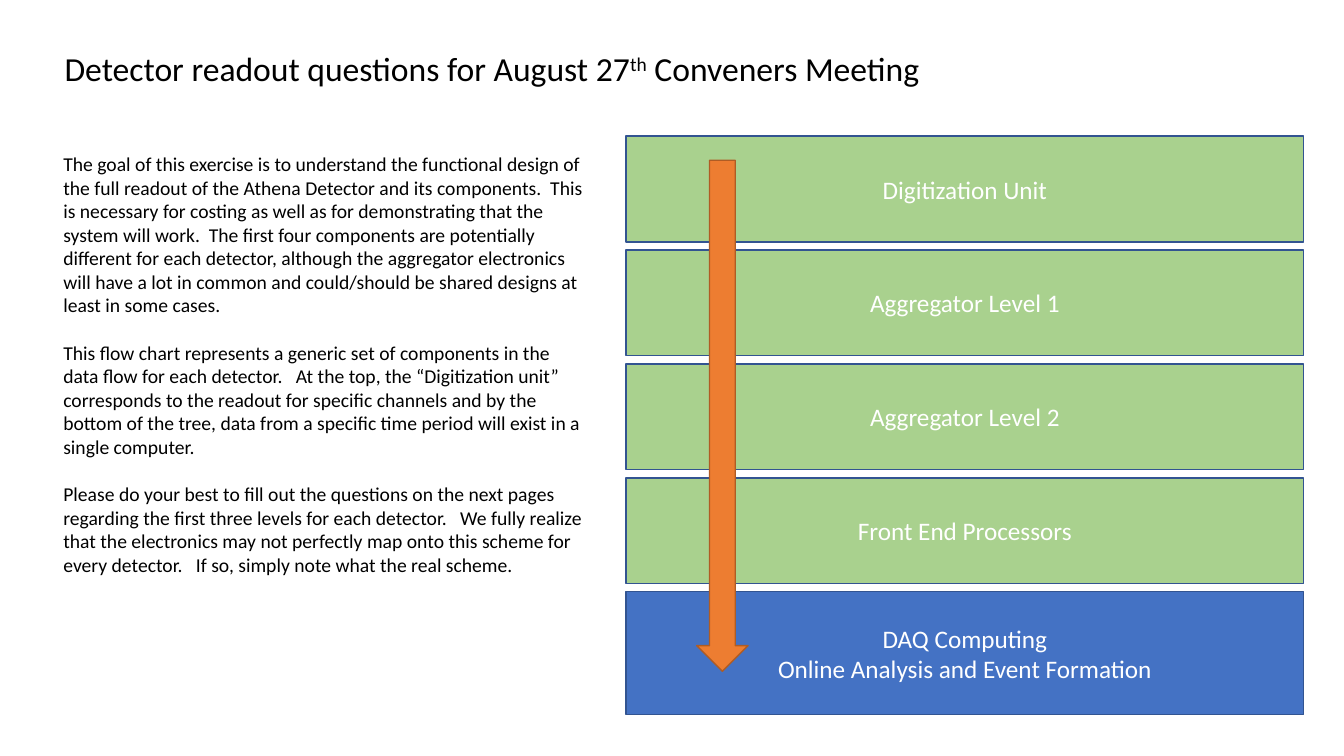
from dataclasses import dataclass

from pptx import Presentation
from pptx.dml.color import RGBColor
from pptx.enum.shapes import MSO_SHAPE as Shape
from pptx.enum.text import MSO_ANCHOR as Anchor, MSO_AUTO_SIZE as AutoSize, PP_ALIGN as Align
from pptx.util import Inches, Pt


@dataclass(frozen=True)
class Theme:
    font: str = "Calibri"
    title_size: int = 24
    stage_size: int = 18
    body_size: int = 14
    paragraph_gap: int = 17
    text: str = "000000"
    stage_text: str = "FFFFFF"
    electronics: str = "A9D18E"
    computing: str = "4472C4"
    stage_line: str = "325491"
    arrow: str = "ED7D31"
    arrow_line: str = "AF5C24"


@dataclass(frozen=True)
class Stage:
    label: str
    fill: str
    height: float = 1.05


THEME = Theme()
STAGE_LEFT, STAGE_TOP, STAGE_WIDTH, STAGE_GAP = 6.21, 1.35, 6.72, 0.08

STAGES = [
    Stage("Digitization Unit", THEME.electronics),
    Stage("Aggregator Level 1", THEME.electronics),
    Stage("Aggregator Level 2", THEME.electronics),
    Stage("Front End Processors", THEME.electronics),
    Stage("DAQ Computing\nOnline Analysis and Event Formation", THEME.computing, 1.22),
]

BODY = [
    "The goal of this exercise is to understand the functional design of the full readout "
    "of the Athena Detector and its components.  This is necessary for costing as well as "
    "for demonstrating that the system will work.  The first four components are potentially "
    "different for each detector, although the aggregator electronics will have a lot in "
    "common and could/should be shared designs at least in some cases.",
    "This flow chart represents a generic set of components in the data flow for each "
    "detector.   At the top, the “Digitization unit” corresponds to the readout for specific "
    "channels and by the bottom of the tree, data from a specific time period will exist in "
    "a single computer.",
    "Please do your best to fill out the questions on the next pages regarding the first "
    "three levels for each detector.   We fully realize that the electronics may not "
    "perfectly map onto this scheme for every detector.   If so, simply note what the real "
    "scheme.",
]


def format_text(tf, size: int, color: str, align: Align) -> None:
    for p in tf.paragraphs:
        p.alignment = align
        for r in p.runs:
            r.font.name = THEME.font
            r.font.size = Pt(size)
            r.font.color.rgb = RGBColor.from_string(color)


def add_block(s, kind: Shape, left: float, top: float, width: float, height: float,
              fill: str, line: str):
    sp = s.shapes.add_shape(kind, Inches(left), Inches(top), Inches(width), Inches(height))
    sp.shadow.inherit = False
    sp.fill.solid()
    sp.fill.fore_color.rgb = RGBColor.from_string(fill)
    sp.line.color.rgb = RGBColor.from_string(line)
    sp.line.width = Pt(1)
    return sp


def add_title(s) -> None:
    sp = s.shapes.title
    sp.left, sp.top, sp.width, sp.height = map(Inches, (0.54, 0.43, 9, 0.5))
    tf = sp.text_frame
    tf.auto_size = AutoSize.NONE
    tf.vertical_anchor = Anchor.TOP
    p = tf.paragraphs[0]
    for part in ("Detector readout questions for August 27", "th", " Conveners Meeting"):
        p.add_run().text = part
    format_text(tf, THEME.title_size, THEME.text, Align.LEFT)
    p.runs[1].font._element.set("baseline", "30000")


def add_body(s) -> None:
    sp = s.shapes.add_textbox(Inches(0.53), Inches(1.46), Inches(5.4), Inches(4.58))
    tf = sp.text_frame
    tf.word_wrap = True
    tf.text = "\n".join(BODY)
    format_text(tf, THEME.body_size, THEME.text, Align.LEFT)
    for p in tf.paragraphs[1:]:
        p.space_before = Pt(THEME.paragraph_gap)


def add_stages(s) -> None:
    top = STAGE_TOP
    for stage in STAGES:
        sp = add_block(s, Shape.RECTANGLE, STAGE_LEFT, top, STAGE_WIDTH, stage.height,
                       stage.fill, THEME.stage_line)
        tf = sp.text_frame
        tf.vertical_anchor = Anchor.MIDDLE
        tf.text = stage.label
        format_text(tf, THEME.stage_size, THEME.stage_text, Align.CENTER)
        top += stage.height + STAGE_GAP


def main() -> None:
    prs = Presentation()
    prs.slide_width, prs.slide_height = Inches(13.33), Inches(7.5)
    s = prs.slides.add_slide(prs.slide_layouts[5])  # Title Only

    add_title(s)
    add_stages(s)
    add_body(s)
    # Data flow direction through the stages
    add_block(s, Shape.DOWN_ARROW, 6.91, 1.59, 0.51, 5.07, THEME.arrow, THEME.arrow_line)

    prs.save("out.pptx")


if __name__ == "__main__":
    main()
